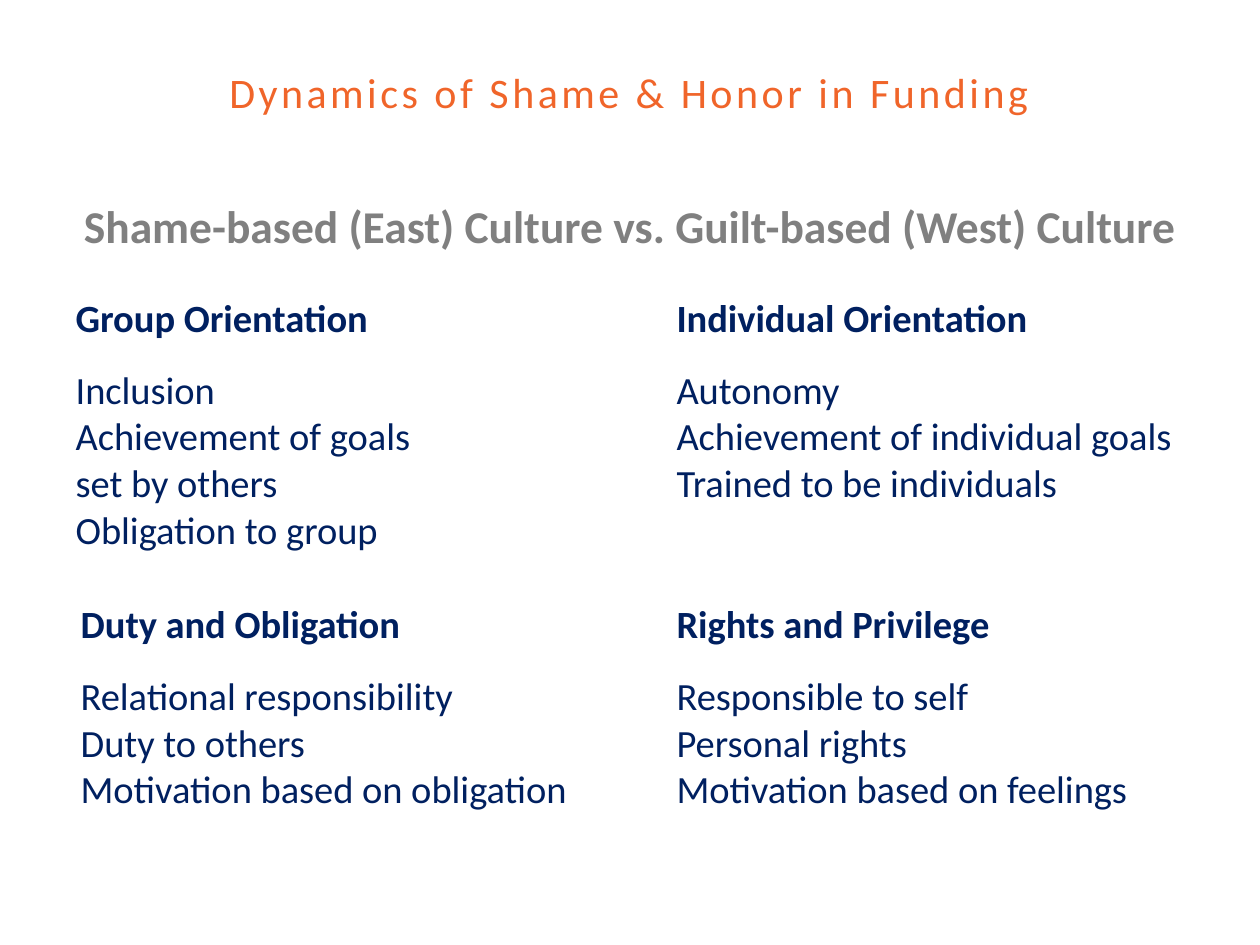
import pptx
import pptx.util
import pptx.dml.color
import pptx.enum.text

Inches = pptx.util.Inches
ALIGN = pptx.enum.text.PP_ALIGN
ANCHOR = pptx.enum.text.MSO_ANCHOR
COLORS = {"title": "F0652A", "sub": "808080", "body": "002060"}
PLAIN = "{2D5ABB26-0587-4C30-8999-92F81FD0307C}"  # no style, no grid

GROUP = [
    ("Group Orientation", "Individual Orientation"),
    (["Inclusion", "Achievement of goals", "set by others",
      "Obligation to group"],
     ["Autonomy", "Achievement of individual goals",
      "Trained to be individuals"]),
]
DUTY = [
    ("Duty and Obligation", "Rights and Privilege"),
    (["Relational responsibility", "Duty to others",
      "Motivation based on obligation"],
     ["Responsible to self", "Personal rights",
      "Motivation based on feelings"]),
]


def write(frame, text, size=22, color="body", bold=False, align=ALIGN.LEFT,
          space=None):
    """Fill a frame with one line, or a list of lines."""
    lines = [text] if isinstance(text, str) else text
    for i, line in enumerate(lines):
        para = frame.add_paragraph() if i else frame.paragraphs[0]
        para.alignment = align
        run = para.add_run()
        run.text = line
        font = run.font
        font.name = "Calibri"
        font.size = pptx.util.Pt(size)
        font.bold = bold
        font.color.rgb = pptx.dml.color.RGBColor.from_string(COLORS[color])
        if space:
            run._r.get_or_add_rPr().set("spc", str(space * 100))


def add_text(slide, text, x, y, w, h, anchor=ANCHOR.TOP, **style):
    box = slide.shapes.add_textbox(Inches(x), Inches(y), Inches(w), Inches(h))
    frame = box.text_frame
    frame.word_wrap = True
    frame.vertical_anchor = anchor
    write(frame, text, align=ALIGN.CENTER, **style)


def add_grid(slide, rows, x, y, widths, heights=(0.52, 1.25)):
    """Add a bare table: two text columns with a narrow gap between."""
    shape = slide.shapes.add_table(
        len(heights), len(widths), Inches(x), Inches(y),
        Inches(sum(widths)), Inches(sum(heights)))
    table = shape.table
    table.first_row = table.horz_banding = False
    table._tbl.tblPr.find(pptx.oxml.ns.qn("a:tableStyleId")).text = PLAIN
    for col, width in zip(table.columns, widths):
        col.width = Inches(width)
    for row, height in zip(table.rows, heights):
        row.height = Inches(height)
    for cell in table.iter_cells():
        cell.fill.background()
        cell.margin_left = cell.margin_right = Inches(0.1)
        cell.margin_top = cell.margin_bottom = Inches(0.1)
    for r, pair in enumerate(rows):
        for c, text in zip((0, 2), pair):
            cell = table.cell(r, c)
            cell.vertical_anchor = ANCHOR.TOP if r else ANCHOR.MIDDLE
            write(cell.text_frame, text, bold=r == 0)


def main():
    deck = pptx.Presentation()
    deck.slide_width, deck.slide_height = Inches(10), Inches(7.5)
    slide = deck.slides.add_slide(deck.slide_layouts[6])

    # Title
    add_text(slide, "Dynamics of Shame & Honor in Funding",
             1.26, 0.43, 7.47, 0.6, anchor=ANCHOR.MIDDLE,
             size=24, color="title", space=2)

    # Culture comparison
    add_grid(slide, GROUP, 0.5, 2.25, (4.53, 0.23, 4.24))
    add_grid(slide, DUTY, 0.54, 4.68, (4.41, 0.32, 4.19))

    # Subtitle
    add_text(slide, "Shame-based (East) Culture vs. Guilt-based (West) Culture",
             0.54, 1.52, 8.93, 0.54, size=26, color="sub", bold=True)

    deck.save("out.pptx")


if __name__ == "__main__":
    main()
